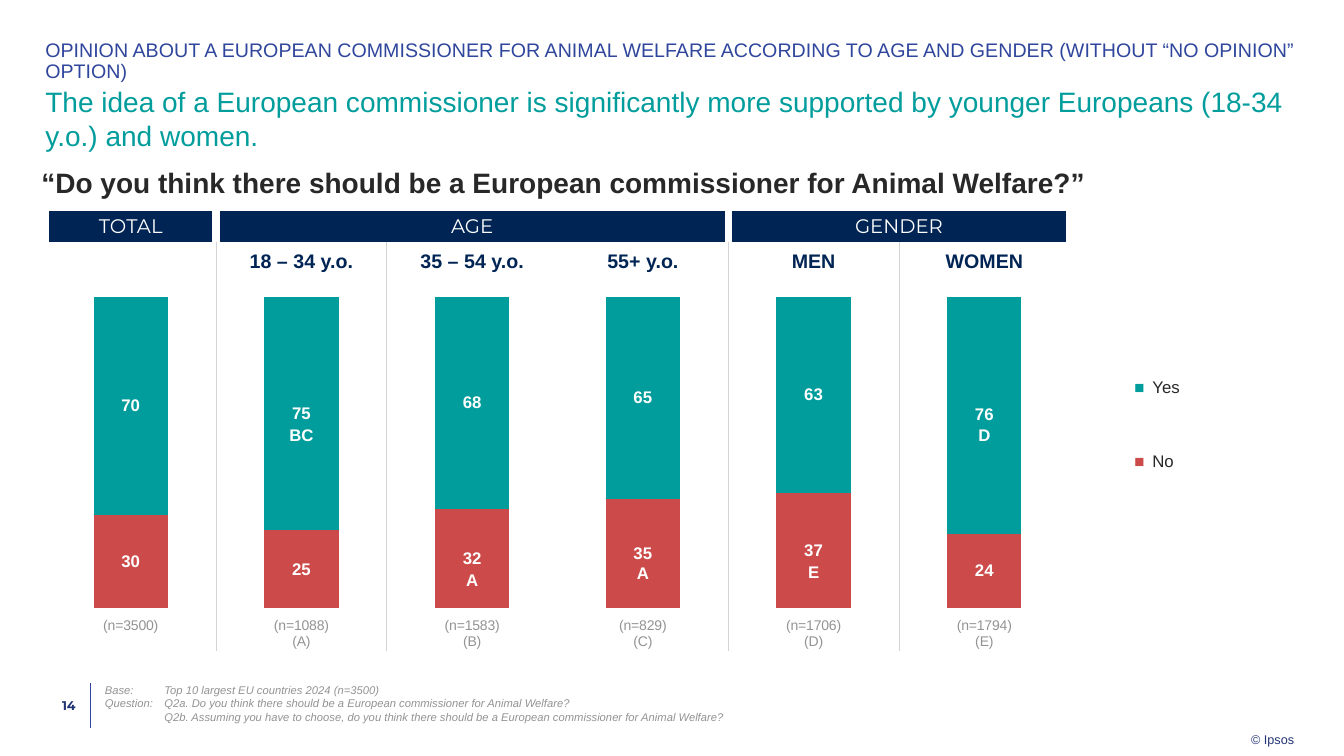
"""Build the slide on opinion about a European commissioner by age and gender."""
from dataclasses import dataclass, field

from lxml import etree
from pptx import Presentation
from pptx import util as u
from pptx.chart import data as chart_data
from pptx.dml.color import RGBColor
from pptx.enum import chart as charts, shapes, text
from pptx.oxml import ns

NAVY = RGBColor(0x00, 0x25, 0x54)
INK = RGBColor(0x23, 0x34, 0x75)
BLUE = RGBColor(0x2F, 0x46, 0x9C)
TEAL = RGBColor(0x00, 0x9D, 0x9C)
RED = RGBColor(0xCC, 0x4A, 0x4A)
DARK = RGBColor(0x28, 0x28, 0x28)
GREY = RGBColor(0x93, 0x93, 0x93)
RULE = RGBColor(0xD2, 0xD5, 0xD5)
WHITE = RGBColor(0xFF, 0xFF, 0xFF)

LEFT, WIDTH, COLUMNS = 0.45, 10.16, 6
COLUMN = WIDTH / COLUMNS
NO_STYLE = "{2D5ABB26-0587-4C30-8999-92F81FD0307C}"
ALIGN = text.PP_ALIGN
MIDDLE = text.MSO_ANCHOR.MIDDLE


@dataclass
class Style:
    """Font, colour and paragraph alignment."""
    size: float
    color: RGBColor
    name: str = "Arial"
    bold: bool = False
    italic: bool = False
    align: ALIGN = ALIGN.LEFT


@dataclass
class Label:
    """A text box with its place, wording and frame format."""
    box: tuple[float, float, float, float]
    lines: list[str]
    style: Style
    frame: dict = field(default_factory=dict)
    spacing: float = 1.0
    tab: float = 0


@dataclass
class Group:
    """A header that spans some table columns."""
    title: str
    first: int
    last: int


@dataclass
class Letter:
    """A significance letter placed over a chart column."""
    text: str
    column: int
    top: float


HEADER = Style(14, WHITE, "Montserrat", align=ALIGN.CENTER)
SUBHEADER = Style(14, NAVY, bold=True, align=ALIGN.CENTER)
VALUE = Style(12, WHITE, bold=True, align=ALIGN.CENTER)
NO_MARGIN = dict.fromkeys(("margin_left", "margin_right", "margin_top", "margin_bottom"), 0)
KEY_MARGIN = NO_MARGIN | {"margin_left": u.Inches(0.04), "margin_right": u.Inches(0.04)}

GROUPS = [Group("TOTAL", 0, 0), Group("AGE", 1, 3), Group("GENDER", 4, 5)]
SUBHEADERS = ["", "18 – 34 y.o.", "35 – 54 y.o.", "55+ y.o.", "MEN", "WOMEN"]
BASES = ["(n=3500)", "(n=1088)\n(A)", "(n=1583)\n(B)", "(n=829)\n(C)", "(n=1706)\n(D)", "(n=1794)\n(E)"]
ANSWERS = [("Yes", TEAL, [70, 75, 68, 65, 63, 76]), ("No", RED, [30, 25, 32, 35, 37, 24])]
LETTERS = [Letter("BC", 1, 4.21), Letter("A", 2, 5.65), Letter("A", 3, 5.58),
           Letter("E", 4, 5.57), Letter("D", 5, 4.21)]

LABELS = [
    Label((LEFT, 0.4, 12.44, 0.42),
          ["OPINION ABOUT A EUROPEAN COMMISSIONER FOR ANIMAL WELFARE ACCORDING TO AGE AND GENDER "
           "(WITHOUT “NO OPINION” OPTION)"], Style(14, BLUE), spacing=0.9),
    Label((LEFT, 0.84, 12.44, 0.79),
          ["The idea of a European commissioner is significantly more supported by younger Europeans "
           "(18-34 y.o.) and women."], Style(20, TEAL)),
    Label((0.41, 1.64, 12.44, 0.34),
          ["“Do you think there should be a European commissioner for Animal Welfare?”"],
          Style(20, DARK, bold=True)),
    Label((LEFT, 6.78, 0.45, 0.43), ["14"],
          Style(9, INK, "Montserrat", bold=True, align=ALIGN.RIGHT),
          {"margin_right": u.Inches(0.15), "vertical_anchor": MIDDLE}),
    Label((1.04, 6.78, 11.02, 0.43),
          ["Base:\tTop 10 largest EU countries 2024 (n=3500)",
           "Question:\tQ2a. Do you think there should be a European commissioner for Animal Welfare?",
           "\tQ2b. Assuming you have to choose, do you think there should be a European commissioner "
           "for Animal Welfare?"], Style(8, GREY, italic=True), tab=0.59),
    Label((12.41, 7.22, 0.43, 0.19), ["© Ipsos"], Style(9, INK),
          {"margin_top": u.Inches(0.04), "word_wrap": False}),
]


def set_values(target, values: dict) -> None:
    """Set each attribute named in the dict."""
    for name, value in values.items():
        setattr(target, name, value)


def set_font(font, style: Style) -> None:
    """Apply a style to a font."""
    set_values(font, {"size": u.Pt(style.size), "name": style.name,
                      "bold": style.bold, "italic": style.italic})
    font.color.rgb = style.color


def add_label(slide, label: Label) -> None:
    """Add one text box."""
    frame = slide.shapes.add_textbox(*map(u.Inches, label.box)).text_frame
    set_values(frame, NO_MARGIN | {"word_wrap": True} | label.frame)
    for index, line in enumerate(label.lines):
        paragraph = frame.add_paragraph() if index else frame.paragraphs[0]
        set_values(paragraph, {"text": line, "alignment": label.style.align, "line_spacing": label.spacing})
        if label.tab:
            tabs = etree.SubElement(paragraph._p.get_or_add_pPr(), ns.qn("a:tabLst"))
            etree.SubElement(tabs, ns.qn("a:tab"), pos=str(u.Inches(label.tab)), algn="l")
        set_font(paragraph.font, label.style)


def add_table(slide, box: tuple, widths: list[float], heights: list[float]):
    """Add a table without style, fills or margins."""
    table = slide.shapes.add_table(len(heights), len(widths), *map(u.Inches, box)).table
    table._tbl.tblPr.find(ns.qn("a:tableStyleId")).text = NO_STYLE
    set_values(table, {"first_row": False, "horz_banding": False})
    for column, width in zip(table.columns, widths):
        column.width = u.Inches(width)
    for row, height in zip(table.rows, heights):
        row.height = u.Inches(height)
    for cell in table.iter_cells():
        set_values(cell, NO_MARGIN | {"vertical_anchor": MIDDLE})
        cell.fill.background()
    return table


def fill_cell(cell, wording: str, style: Style) -> None:
    """Write styled text in a cell."""
    paragraph = cell.text_frame.paragraphs[0]
    set_values(paragraph, {"text": wording, "alignment": style.align})
    set_font(paragraph.font, style)


def add_border(cell, sides: str, color: RGBColor, points: float) -> None:
    """Draw the left (L) or right (R) borders of a cell."""
    for index, side in enumerate(sides):
        line = etree.Element(ns.qn(f"a:ln{side}"), w=str(u.Pt(points)))
        fill = etree.SubElement(line, ns.qn("a:solidFill"))
        etree.SubElement(fill, ns.qn("a:srgbClr"), val=str(color))
        cell._tc.get_or_add_tcPr().insert(index, line)


def add_header_table(slide) -> None:
    """Add the column headers and the rules between groups."""
    table = add_table(slide, (LEFT, 2.09, WIDTH, 4.37), [COLUMN] * COLUMNS, [0.31, 0.39, 3.67])
    for group in GROUPS:
        for column in range(group.first, group.last + 1):
            cell = table.cell(0, column)
            cell.fill.solid()
            cell.fill.fore_color.rgb = NAVY
            add_border(cell, "LR", WHITE, 6)
        head = table.cell(0, group.first)
        if group.last > group.first:
            head.merge(table.cell(0, group.last))
        fill_cell(head, group.title, HEADER)
        if group.first:
            for row in (1, 2):
                add_border(table.cell(row, group.first - 1), "R", RULE, 0.75)
                add_border(table.cell(row, group.first), "L", RULE, 0.75)
    for column, wording in enumerate(SUBHEADERS):
        fill_cell(table.cell(1, column), wording, SUBHEADER)


def add_answer_chart(slide) -> None:
    """Add the stacked columns of answers."""
    data = chart_data.CategoryChartData(number_format="0")
    data.categories = BASES
    for name, _, values in ANSWERS:
        data.add_series(name, values)
    chart = slide.shapes.add_chart(charts.XL_CHART_TYPE.COLUMN_STACKED,
                                   *map(u.Inches, (LEFT, 2.8, WIDTH, 3.67)), data).chart
    set_values(chart, {"has_legend": False, "has_title": False})
    set_font(chart.font, Style(10, DARK))
    ticks, places = charts.XL_TICK_MARK.NONE, charts.XL_TICK_LABEL_POSITION
    common = {"major_tick_mark": ticks, "minor_tick_mark": ticks, "has_major_gridlines": False}
    set_values(chart.category_axis, common | {"tick_label_position": places.HIGH})
    set_values(chart.value_axis, common | {"tick_label_position": places.NONE, "minimum_scale": 0,
                                           "maximum_scale": 100, "reverse_order": True})
    for axis in (chart.category_axis, chart.value_axis):
        axis.format.line.fill.background()
    set_font(chart.category_axis.tick_labels.font, Style(10, GREY))
    plot = chart.plots[0]
    set_values(plot, {"gap_width": 130, "overlap": 100, "vary_by_categories": False})
    for series, (_, color, _) in zip(plot.series, ANSWERS):
        series.format.fill.solid()
        series.format.fill.fore_color.rgb = color
        set_values(series.data_labels, {"show_value": True, "number_format": "0;0;",
                                        "number_format_is_linked": False})
        set_font(series.data_labels.font, VALUE)
    area = chart._chartSpace.chart.plotArea
    for old in area.findall(ns.qn("c:layout")):
        area.remove(old)
    layout = etree.Element(ns.qn("c:layout"))
    manual = etree.SubElement(layout, ns.qn("c:manualLayout"))
    for tag, value in (("layoutTarget", "inner"), ("xMode", "edge"), ("yMode", "edge"),
                       ("x", "0"), ("y", "0.039"), ("w", "1"), ("h", "0.843")):
        etree.SubElement(manual, ns.qn(f"c:{tag}"), val=value)
    area.insert(0, layout)


def add_key(slide) -> None:
    """Add the colour key beside the chart."""
    table = add_table(slide, (11.08, 3.48, 1.77, 1.46), [0.31, 1.46], [0.73, 0.73])
    for row, (name, color, _) in enumerate(ANSWERS):
        fill_cell(table.cell(row, 0), "■", Style(12, color, align=ALIGN.RIGHT))
        fill_cell(table.cell(row, 1), name, Style(12, DARK))
    for cell in table.iter_cells():
        set_values(cell, KEY_MARGIN)


def add_footer_rule(slide) -> None:
    """Add the thin line beside the page number."""
    ends = map(u.Inches, (0.9, 6.78, 0.9, 7.22))
    rule = slide.shapes.add_connector(shapes.MSO_CONNECTOR.STRAIGHT, *ends)
    rule.line.color.rgb = BLUE
    rule.line.width = u.Pt(0.5)
    etree.SubElement(rule._element.spPr, ns.qn("a:effectLst"))


def main() -> None:
    """Build and save the presentation."""
    presentation = Presentation()
    set_values(presentation, {"slide_width": u.Inches(13.33), "slide_height": u.Inches(7.5)})
    slide = presentation.slides.add_slide(presentation.slide_layouts[6])
    add_footer_rule(slide)
    add_header_table(slide)
    add_answer_chart(slide)
    add_key(slide)
    letters = [Label((LEFT + COLUMN * (letter.column + 0.5) - 0.12, letter.top, 0.24, 0.2),
                     [letter.text], VALUE, {"word_wrap": False}) for letter in LETTERS]
    for label in LABELS + letters:
        add_label(slide, label)
    presentation.save("out.pptx")


if __name__ == "__main__":
    main()
